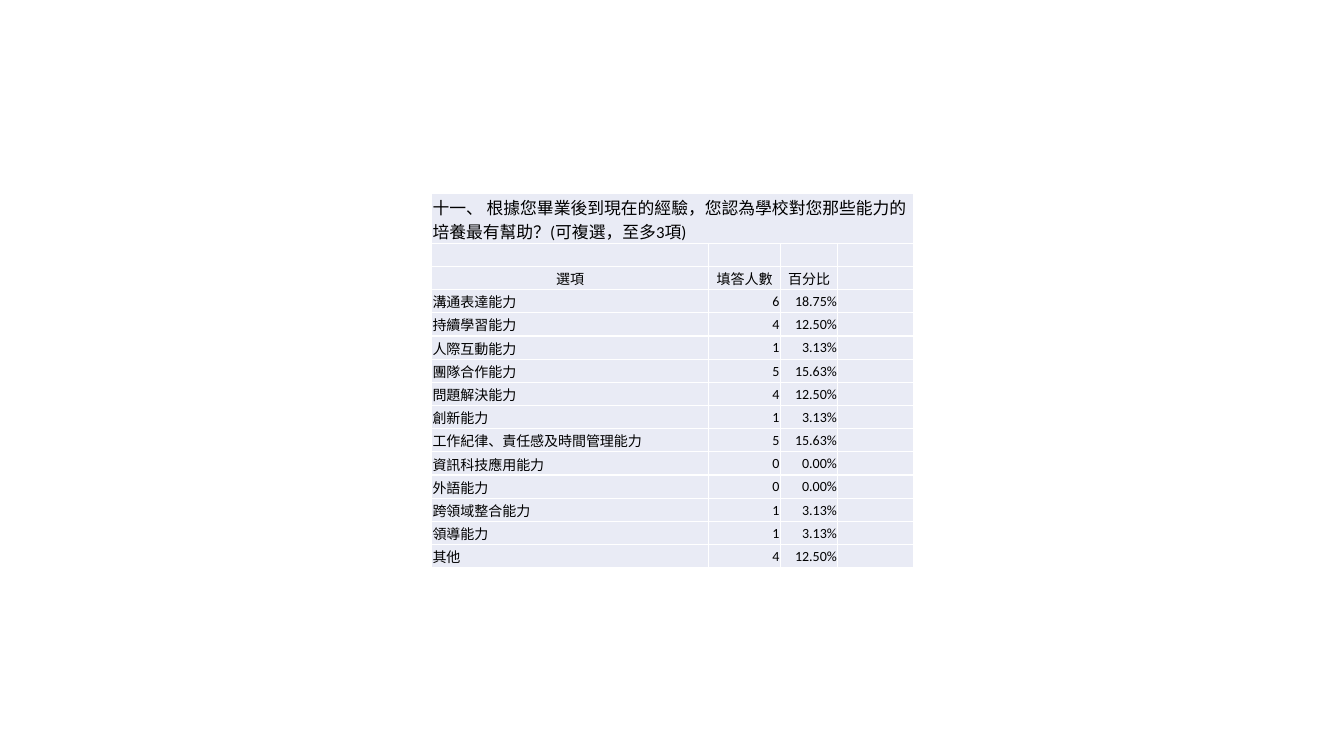
from lxml.etree import SubElement
from pptx import Presentation
from pptx.dml.color import RGBColor
from pptx.enum.text import MSO_ANCHOR, PP_ALIGN
from pptx.oxml.ns import qn
from pptx.util import Pt

THEME = {
    "font": "Calibri",
    "text": RGBColor.from_string("000000"),
    "fill": RGBColor.from_string("E9EBF5"),
    "border": "FFFFFF",
    "border_width": Pt(1),
    "question_size": Pt(12),
    "body_size": Pt(10),
}
QUESTION = "十一、 根據您畢業後到現在的經驗，您認為學校對您那些能力的培養最有幫助？(可複選，至多3項)"
HEADERS = ("選項", "填答人數", "百分比")
ANSWERS = [
    ("溝通表達能力", "6", "18.75%"),
    ("持續學習能力", "4", "12.50%"),
    ("人際互動能力", "1", "3.13%"),
    ("團隊合作能力", "5", "15.63%"),
    ("問題解決能力", "4", "12.50%"),
    ("創新能力", "1", "3.13%"),
    ("工作紀律、責任感及時間管理能力", "5", "15.63%"),
    ("資訊科技應用能力", "0", "0.00%"),
    ("外語能力", "0", "0.00%"),
    ("跨領域整合能力", "1", "3.13%"),
    ("領導能力", "1", "3.13%"),
    ("其他", "4", "12.50%"),
]
COLUMN_WIDTHS = (275, 71, 57, 75)
ROW_HEIGHT = 23
QUESTION_HEIGHT = 46
ANSWER_ALIGNS = (PP_ALIGN.LEFT, PP_ALIGN.RIGHT, PP_ALIGN.RIGHT)


def px(n):
    """Turn px, a hundredth of an inch each, into EMU."""
    return n * 9144


def apply(target, values):
    """Set each named attribute on the target."""
    for name, value in values.items():
        setattr(target, name, value)


def format_cell(cell):
    """Give a cell its borders, fill, margins and empty-text size."""
    tcPr = cell._tc.get_or_add_tcPr()
    for side in ("lnL", "lnR", "lnT", "lnB"):
        ln = SubElement(tcPr, qn(f"a:{side}"), w=str(THEME["border_width"]))
        fill = SubElement(ln, qn("a:solidFill"))
        SubElement(fill, qn("a:srgbClr"), val=THEME["border"])
    cell.fill.solid()
    cell.fill.fore_color.rgb = THEME["fill"]
    apply(cell, {
        "margin_left": px(1), "margin_right": px(1),
        "margin_top": px(1), "margin_bottom": 0,
        "vertical_anchor": MSO_ANCHOR.MIDDLE,
    })
    p = cell.text_frame.paragraphs[0]
    SubElement(p._p, qn("a:endParaRPr"), sz=str(int(THEME["body_size"].pt * 100)))


def write_cell(cell, text, size, align):
    """Write one run of text into a cell."""
    p = cell.text_frame.paragraphs[0]
    p.alignment = align
    r = p.add_run()
    r.text = text
    apply(r.font, {"name": THEME["font"], "size": size})
    r.font.color.rgb = THEME["text"]


def add_survey_table(slide, left, top):
    """Place the question and its answer counts from the given corner."""
    rows = [(), HEADERS, *ANSWERS]
    height = QUESTION_HEIGHT + ROW_HEIGHT * len(rows)
    box = [px(n) for n in (left, top, sum(COLUMN_WIDTHS), height)]
    table = slide.shapes.add_table(len(rows) + 1, len(COLUMN_WIDTHS), *box).table
    apply(table, {"first_row": False, "horz_banding": False})
    for column, width in zip(table.columns, COLUMN_WIDTHS):
        column.width = px(width)
    for row in table.rows:
        row.height = px(ROW_HEIGHT)
    table.rows[0].height = px(QUESTION_HEIGHT)
    for cell in table.iter_cells():
        format_cell(cell)

    question = table.cell(0, 0)
    question.merge(table.cell(0, len(COLUMN_WIDTHS) - 1))
    write_cell(question, QUESTION, THEME["question_size"], PP_ALIGN.LEFT)
    for i, values in enumerate(rows, 1):
        aligns = [PP_ALIGN.CENTER] * 3 if values is HEADERS else ANSWER_ALIGNS
        for j, (text, align) in enumerate(zip(values, aligns)):
            write_cell(table.cell(i, j), text, THEME["body_size"], align)


def main():
    """Build the survey slide and save it."""
    prs = Presentation()
    apply(prs, {"slide_width": px(1333), "slide_height": px(750)})
    slide = prs.slides.add_slide(prs.slide_layouts[6])
    add_survey_table(slide, 428, 192)
    prs.save("out.pptx")


if __name__ == "__main__":
    main()
